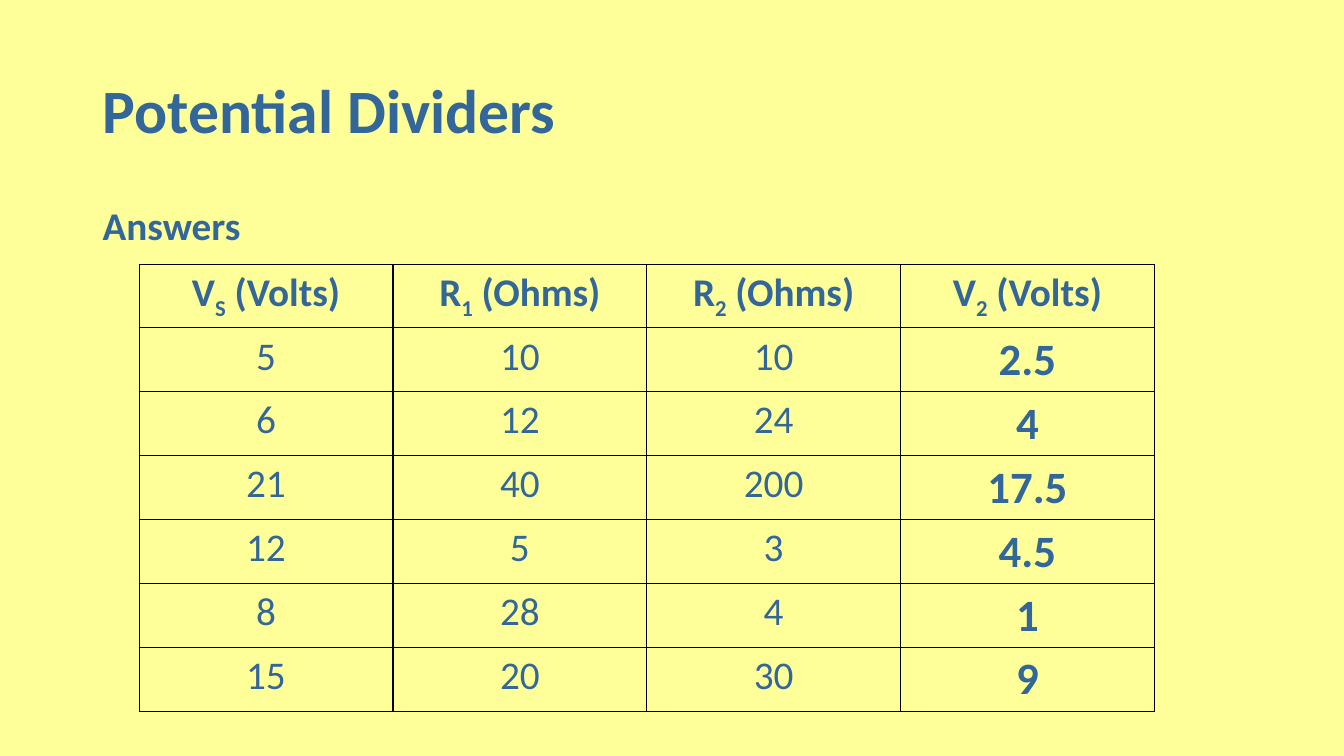
"""Build the slide of answers on potential dividers."""
from dataclasses import dataclass

from lxml.etree import SubElement
from pptx import Presentation
from pptx.dml.color import RGBColor as Rgb
from pptx.enum.text import MSO_ANCHOR as Anchor, PP_ALIGN as Align
from pptx.oxml.ns import qn
from pptx.util import Inches, Pt

COLORS = {"page": "FFFF99", "text": "336699", "line": "000000"}
FONT = "Calibri"


@dataclass
class Head:
    """A column heading: symbol, subscript and unit."""
    sign: str
    sub: str
    unit: str


HEADS = [Head("V", "S", "Volts"), Head("R", "1", "Ohms"),
         Head("R", "2", "Ohms"), Head("V", "2", "Volts")]
ROWS = [("5", "10", "10", "2.5"), ("6", "12", "24", "4"),
        ("21", "40", "200", "17.5"), ("12", "5", "3", "4.5"),
        ("8", "28", "4", "1"), ("15", "20", "30", "9")]


def style(para, size: int, bold: bool = True) -> None:
    """Set the font of a paragraph."""
    font = para.font
    font.name, font.size, font.bold = FONT, Pt(size), bold
    font.color.rgb = Rgb.from_string(COLORS["text"])


def write(shape, text: str, size: int, anchor: Anchor) -> None:
    """Write one line of text into a title or text box."""
    frame = shape.text_frame
    frame.word_wrap, frame.vertical_anchor = True, anchor
    para = frame.paragraphs[0]
    para.text, para.line_spacing = text, 0.9
    para.alignment = Align.LEFT
    style(para, size)


def border(cell) -> None:
    """Clear the fill of a cell and rule its four sides."""
    props = cell._tc.get_or_add_tcPr()
    for side in ("lnL", "lnR", "lnT", "lnB"):
        line = SubElement(props, qn(f"a:{side}"), w=str(Pt(1)))
        fill = SubElement(line, qn("a:solidFill"))
        SubElement(fill, qn("a:srgbClr"), val=COLORS["line"])
    cell.fill.background()


def label(para, head: Head) -> None:
    """Write a heading with its lowered subscript."""
    para.add_run().text = head.sign
    sub = para.add_run()
    sub.text = head.sub
    sub.font._element.set("baseline", "-25000")
    para.add_run().text = f" ({head.unit})"


def grid(slide) -> None:
    """Draw the table of answers."""
    frame = slide.shapes.add_table(
        len(ROWS) + 1, len(HEADS),
        Inches(1.38), Inches(2.62), Inches(10.07), Inches(4.39))
    table = frame.table
    table.first_row = table.horz_banding = False
    last = len(HEADS) - 1
    for row, data in enumerate([HEADS, *ROWS]):
        for col, item in enumerate(data):
            cell = table.cell(row, col)
            border(cell)
            para = cell.text_frame.paragraphs[0]
            para.alignment = Align.CENTER
            if isinstance(item, Head):
                label(para, item)
                style(para, 28)
            else:
                para.text = item
                style(para, 32 if col == last else 28, col == last)


def main() -> None:
    """Build and save the slide."""
    deck = Presentation()
    deck.slide_width, deck.slide_height = Inches(13.33), Inches(7.5)
    slide = deck.slides.add_slide(deck.slide_layouts[5])
    fill = slide.background.fill
    fill.solid()
    fill.fore_color.rgb = Rgb.from_string(COLORS["page"])
    title = slide.shapes.title
    title.left, title.top = Inches(0.92), Inches(0.4)
    title.width, title.height = Inches(11.5), Inches(1.45)
    write(title, "Potential Dividers", 44, Anchor.MIDDLE)
    body = slide.shapes.add_textbox(
        Inches(0.92), Inches(2), Inches(11.5), Inches(4.76))
    write(body, "Answers", 28, Anchor.TOP)
    grid(slide)
    deck.save("out.pptx")


if __name__ == "__main__":
    main()
